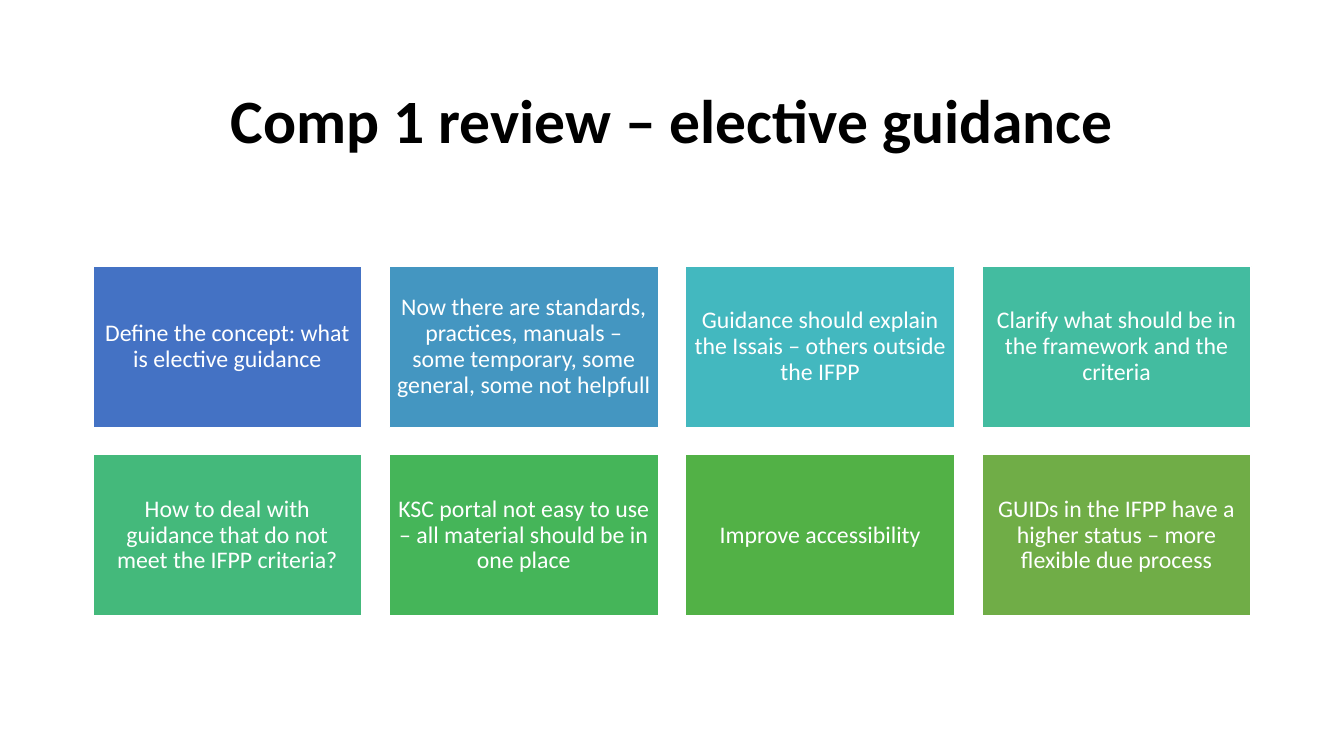
import pptx
import pptx.dml.color
import pptx.enum.shapes
import pptx.enum.text
import pptx.util

Cm = pptx.util.Cm
Pt = pptx.util.Pt

TILES = [
    ("Define the concept: what is elective guidance", "4472C4"),
    ("Now there are standards, practices, manuals – some temporary, "
     "some general, some not helpfull", "4496C1"),
    ("Guidance should explain the Issais – others outside the IFPP", "43B8BF"),
    ("Clarify what should be in the framework and the criteria", "43BCA0"),
    ("How to deal with guidance that do not meet the IFPP criteria?", "44B97B"),
    ("KSC portal not easy to use – all material should be in one place", "45B559"),
    ("Improve accessibility", "52B146"),
    ("GUIDs in the IFPP have a higher status – more flexible due process", "70AD47"),
]
COLUMNS = 4
LEFT, TOP = 2.34, 6.71
TILE_W, TILE_H = 6.78, 4.06
STEP_X, STEP_Y = 7.47, 4.75


def rgb(value):
    return pptx.dml.color.RGBColor.from_string(value)


def set_format(target, values):
    for name, value in values.items():
        setattr(target, name, value)


class Deck:
    title_font = {"name": "Calibri", "size": Pt(44), "bold": True}
    tile_font = {"name": "Calibri", "size": Pt(17), "bold": False}
    paragraph = {
        "alignment": pptx.enum.text.PP_ALIGN.CENTER,
        "line_spacing": 0.9,
        "space_before": Pt(0),
        "space_after": Pt(6),
    }
    frame = {
        "word_wrap": True,
        "auto_size": pptx.enum.text.MSO_AUTO_SIZE.NONE,
        "vertical_anchor": pptx.enum.text.MSO_ANCHOR.MIDDLE,
    }
    tile_margins = {f"margin_{side}": Cm(0.18)
                    for side in ("left", "top", "right", "bottom")}

    def __init__(self):
        self.prs = pptx.Presentation()
        set_format(self.prs, {"slide_width": Cm(33.87), "slide_height": Cm(19.05)})
        self.s = self.prs.slides.add_slide(self.prs.slide_layouts[5])

    def text(self, sp, text, font, color):
        tf = sp.text_frame
        set_format(tf, self.frame)
        p = tf.paragraphs[0]
        set_format(p, self.paragraph)
        r = p.add_run()
        r.text = text
        set_format(r.font, font)
        r.font.color.rgb = rgb(color)

    def title(self, text, x, y, w, h):
        sp = self.s.shapes.title
        set_format(sp, {"left": Cm(x), "top": Cm(y), "width": Cm(w), "height": Cm(h)})
        self.text(sp, text, self.title_font, "000000")

    def tile(self, text, fill, x, y, w, h):
        sp = self.s.shapes.add_shape(
            pptx.enum.shapes.MSO_SHAPE.RECTANGLE, Cm(x), Cm(y), Cm(w), Cm(h))
        sp.shadow.inherit = False
        sp.fill.solid()
        sp.fill.fore_color.rgb = rgb(fill)
        sp.line.color.rgb = rgb("FFFFFF")
        sp.line.width = Pt(1)
        set_format(sp.text_frame, self.tile_margins)
        self.text(sp, text, self.tile_font, "FFFFFF")


def main():
    deck = Deck()
    deck.title("Comp 1 review – elective guidance", LEFT, 1.55, 29.21, 3.15)
    for i, (text, fill) in enumerate(TILES):
        row, col = divmod(i, COLUMNS)
        deck.tile(text, fill, LEFT + col * STEP_X, TOP + row * STEP_Y, TILE_W, TILE_H)
    deck.prs.save("out.pptx")


if __name__ == "__main__":
    main()
